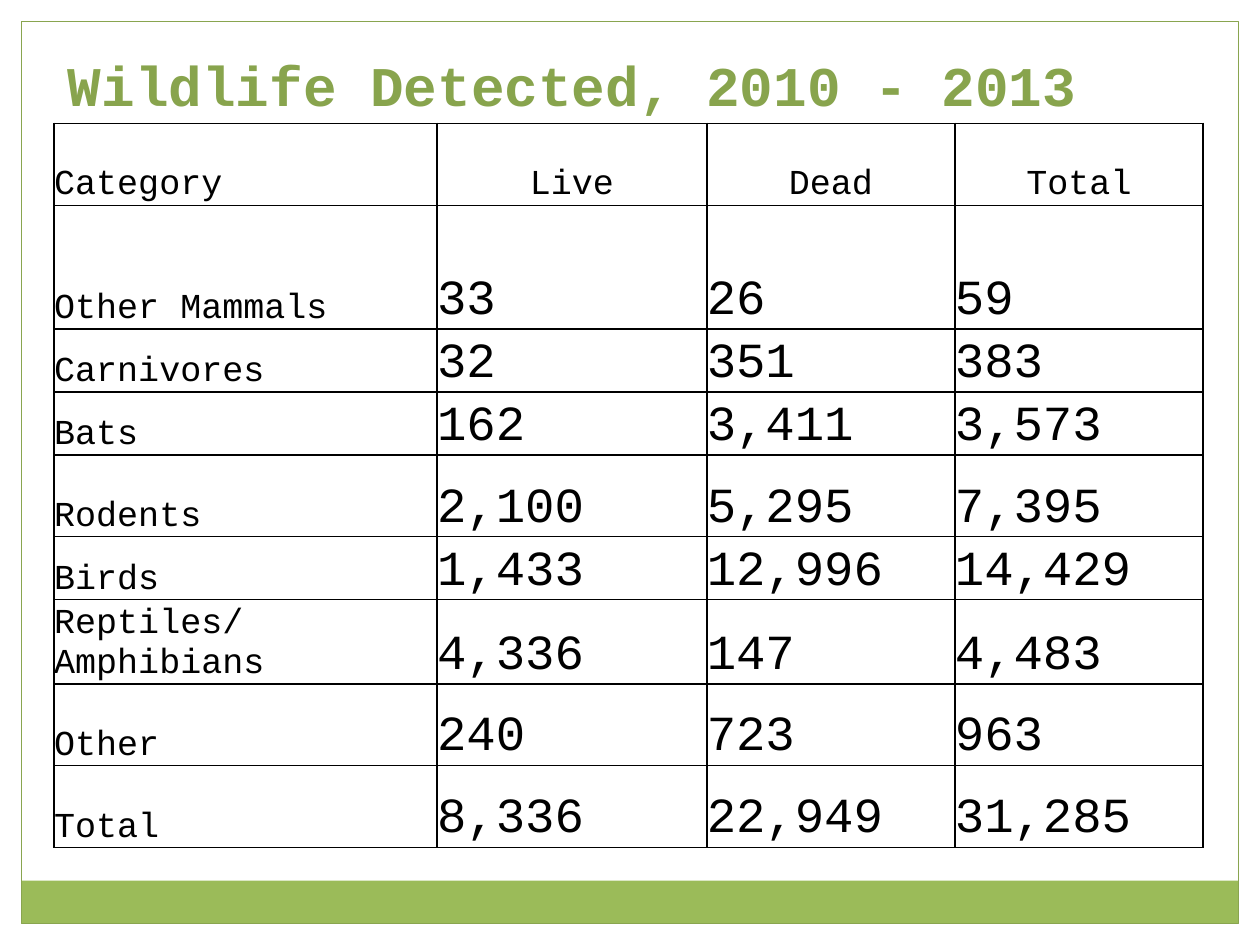
from lxml import etree
from pptx import Presentation
from pptx.dml.color import RGBColor
from pptx.enum.shapes import MSO_SHAPE
from pptx.enum.text import MSO_ANCHOR, PP_ALIGN
from pptx.oxml.ns import qn
from pptx.util import Inches, Pt

RECTANGLE = MSO_SHAPE.RECTANGLE
BOTTOM = MSO_ANCHOR.BOTTOM
LEFT, CENTER = PP_ALIGN.LEFT, PP_ALIGN.CENTER

BLACK = RGBColor(0x00, 0x00, 0x00)
WHITE = RGBColor(0xFF, 0xFF, 0xFF)
BAND_GREEN = RGBColor(0x9B, 0xBB, 0x59)
FRAME_GREEN = RGBColor(0x89, 0xA5, 0x4F)
TITLE_GREEN = RGBColor(0x88, 0xA4, 0x4D)

# Content
TITLE = "Wildlife Detected, 2010 - 2013"
HEADER = ("Category", "Live", "Dead", "Total")
COUNTS = [
    ("Other Mammals", "33", "26", "59"),
    ("Carnivores", "32", "351", "383"),
    ("Bats", "162", "3,411", "3,573"),
    ("Rodents", "2,100", "5,295", "7,395"),
    ("Birds", "1,433", "12,996", "14,429"),
    ("Reptiles/Amphibians", "4,336", "147", "4,483"),
    ("Other", "240", "723", "963"),
    ("Total", "8,336", "22,949", "31,285"),
]
COLUMN_WIDTHS = (3.04, 2.14, 1.97, 1.97)
ROW_HEIGHTS = (0.65, 0.98, 0.5, 0.5, 0.65, 0.5, 0.65, 0.65, 0.65)

# Page size, margin and filled bars: left, top, width, height, colour
WIDTH, HEIGHT, MARGIN = 10, 7.5, 0.17
BARS = [
    (0, 0, WIDTH, MARGIN, WHITE),
    (WIDTH - MARGIN, 0, MARGIN, HEIGHT, WHITE),
    (0, 0, MARGIN, HEIGHT, WHITE),
    (MARGIN, 6.99, WIDTH - 2 * MARGIN, 0.34, BAND_GREEN),
]

# Text formats
FONT = {"name": "Courier New"}
TITLE_FONT = {**FONT, "size": Pt(32), "bold": True}
LABEL_FONT = {**FONT, "size": Pt(20)}
COUNT_FONT = {**FONT, "size": Pt(28)}
NO_MARGINS = {f"margin_{side}": 0 for side in ("left", "right", "top", "bottom")}


def set_attributes(target, values):
    for name, value in values.items():
        setattr(target, name, value)


def write(text_frame, text, font, color, alignment=LEFT):
    paragraph = text_frame.paragraphs[0]
    paragraph.alignment = alignment
    run = paragraph.add_run()
    run.text = text
    set_attributes(run.font, font)
    run.font.color.rgb = color


def add_rectangle(slide, left, top, width, height):
    shape = slide.shapes.add_shape(
        RECTANGLE, Inches(left), Inches(top), Inches(width), Inches(height))
    shape.shadow.inherit = False
    return shape


def add_borders(cell):
    properties = cell._tc.get_or_add_tcPr()
    for edge in ("a:lnL", "a:lnR", "a:lnT", "a:lnB"):
        line = etree.SubElement(properties, qn(edge), w=str(Pt(1)))
        fill = etree.SubElement(line, qn("a:solidFill"))
        etree.SubElement(fill, qn("a:srgbClr"), val=str(BLACK))


def add_counts_table(slide):
    rows = [HEADER] + COUNTS
    table = slide.shapes.add_table(
        len(rows), len(HEADER), Inches(0.43), Inches(0.98),
        Inches(sum(COLUMN_WIDTHS)), Inches(sum(ROW_HEIGHTS))).table
    set_attributes(table, {"first_row": False, "horz_banding": False})
    for column, width in zip(table.columns, COLUMN_WIDTHS):
        column.width = Inches(width)
    for row, height in zip(table.rows, ROW_HEIGHTS):
        row.height = Inches(height)

    for row_index, row in enumerate(rows):
        for column_index, text in enumerate(row):
            cell = table.cell(row_index, column_index)
            set_attributes(cell, {**NO_MARGINS, "vertical_anchor": BOTTOM})
            add_borders(cell)
            cell.fill.background()
            is_header, is_label = row_index == 0, column_index == 0
            write(cell.text_frame, text,
                  LABEL_FONT if is_header or is_label else COUNT_FONT, BLACK,
                  CENTER if is_header and not is_label else LEFT)


def main():
    presentation = Presentation()
    presentation.slide_width = Inches(WIDTH)
    presentation.slide_height = Inches(HEIGHT)
    slide = presentation.slides.add_slide(presentation.slide_layouts[6])

    # White margins and bottom band
    for *place, color in BARS:
        bar = add_rectangle(slide, *place)
        bar.fill.solid()
        bar.fill.fore_color.rgb = color
        bar.line.fill.background()

    # Frame
    frame = add_rectangle(
        slide, MARGIN, MARGIN, WIDTH - 2 * MARGIN, HEIGHT - 2 * MARGIN)
    frame.fill.background()
    frame.line.color.rgb = FRAME_GREEN
    frame.line.width = Pt(0.75)

    # Title
    title = slide.shapes.add_textbox(
        Inches(0.44), Inches(0.2), Inches(8.33), Inches(0.78))
    set_attributes(title.text_frame, {"word_wrap": True, "vertical_anchor": BOTTOM})
    write(title.text_frame, TITLE, TITLE_FONT, TITLE_GREEN)

    # Table of detections
    add_counts_table(slide)

    presentation.save("out.pptx")


if __name__ == "__main__":
    main()
